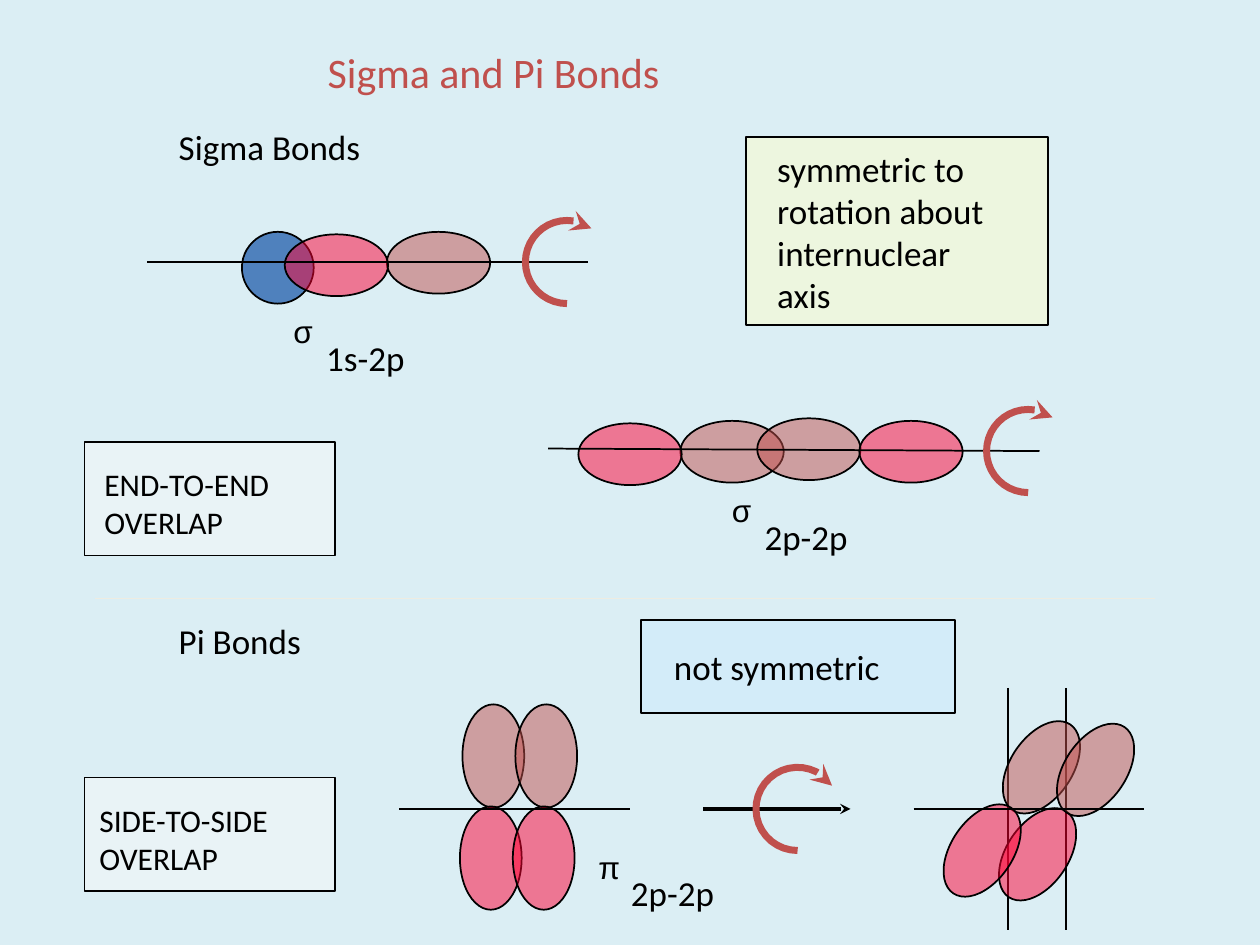
from dataclasses import dataclass
from math import cos, radians, sin

from lxml.etree import SubElement
from pptx import Presentation
from pptx.dml.color import RGBColor
from pptx.enum.shapes import MSO_CONNECTOR as Connector, MSO_SHAPE as Shape
from pptx.enum.text import MSO_ANCHOR as Anchor, MSO_AUTO_SIZE as AutoSize, PP_ALIGN as Align
from pptx.oxml.ns import qn
from pptx.util import Inches, Pt


@dataclass(frozen=True)
class Theme:
    background: str = "DBEEF4"
    ink: str = "000000"
    accent: str = "C0504D"
    rule: str = "EEECE1"
    s_orbital: str = "4F81BD"
    plus_lobe: str = "FF0033"
    minus_lobe: str = "C0504D"
    overlap_card: str = "F8F8F8"
    sigma_card: str = "FFFFCC"
    pi_card: str = "CCECFF"
    font: str = "Calibri"
    symbol_font: str = "Arial"
    title_size: int = 24
    text_size: int = 20
    small_size: int = 18


@dataclass(frozen=True)
class Box:
    left: float
    top: float
    width: float
    height: float

    def inner(self, dx, dy, width, height):
        """Return a box placed relative to this one's top left corner."""
        return Box(self.left + dx, self.top + dy, width, height)

    def inches(self):
        return [Inches(v) for v in (self.left, self.top, self.width, self.height)]


THEME = Theme()
LOBE_LONG, LOBE_SHORT = 0.82, 0.49
ARC_RADIUS = 0.33
TILT = 34


def rgb(code):
    return RGBColor.from_string(code)


def set_line(shape, color=THEME.ink, width=1, arrow=False):
    shape.line.color.rgb = rgb(color)
    shape.line.width = Pt(width)
    if arrow:
        SubElement(shape.line._get_or_add_ln(), qn("a:tailEnd"), type="stealth")


def draw_shape(page, kind, box, color, opacity=50, rotation=0):
    shape = page.shapes.add_shape(kind, *box.inches())
    shape.shadow.inherit = False
    shape.rotation = rotation
    shape.fill.solid()
    shape.fill.fore_color.rgb = rgb(color)
    if opacity < 100:
        color_node = shape.fill._xPr.find(qn("a:solidFill"))[0]
        SubElement(color_node, qn("a:alpha"), val=str(opacity * 1000))
    set_line(shape)


def draw_line(page, x1, y1, x2, y2, color=THEME.ink, width=1, arrow=False):
    line = page.shapes.add_connector(
        Connector.STRAIGHT, Inches(x1), Inches(y1), Inches(x2), Inches(y2))
    set_line(line, color, width, arrow)
    SubElement(line._element.spPr, qn("a:effectLst"))


def draw_rotation_arc(page, box, end_angle):
    """Draw an arrow turning clockwise from the bottom of the circle to end_angle."""
    center_x, center_y = box.left + ARC_RADIUS, box.top + ARC_RADIUS
    steps = 24
    angles = [radians(90 + (end_angle - 90) * i / steps) for i in range(steps + 1)]
    points = [(Inches(center_x + ARC_RADIUS * cos(a)), Inches(center_y + ARC_RADIUS * sin(a)))
              for a in angles]
    builder = page.shapes.build_freeform(*points[0])
    builder.add_line_segments(points[1:], close=False)
    arc = builder.convert_to_shape()
    arc.shadow.inherit = False
    arc.fill.background()
    set_line(arc, THEME.accent, 4, arrow=True)


def fill_text(frame, lines, size, color=THEME.ink, font=THEME.font):
    for i, line in enumerate(lines):
        para = frame.paragraphs[0] if i == 0 else frame.add_paragraph()
        para.alignment = Align.LEFT
        span = para.add_run()
        span.text = line
        span.font.size = Pt(size)
        span.font.name = font
        span.font.color.rgb = rgb(color)


def write(page, box, lines, size=THEME.text_size, font=THEME.font):
    frame = page.shapes.add_textbox(*box.inches()).text_frame
    frame.word_wrap = False
    fill_text(frame, lines, size, font=font)


def add_title(page, box, text):
    title = page.shapes.title
    title.left, title.top, title.width, title.height = box.inches()
    frame = title.text_frame
    frame.auto_size = AutoSize.NONE
    frame.vertical_anchor = Anchor.TOP
    fill_text(frame, [text], THEME.title_size, THEME.accent)


def add_card(page, box, color, text_box, lines, size=THEME.text_size):
    draw_shape(page, Shape.RECTANGLE, box, color)
    write(page, text_box, lines, size)


def add_bond_label(page, box, symbol, orbitals):
    """Write a Greek symbol with its orbitals as a lowered label."""
    write(page, box.inner(0.26, 0.19, 0.97, 0.43), [orbitals])
    write(page, box, [symbol], THEME.small_size, THEME.symbol_font)


def draw_lobes(page, box, lobes, upright=False, rotation=0):
    width, height = (LOBE_SHORT, LOBE_LONG) if upright else (LOBE_LONG, LOBE_SHORT)
    for dx, dy, color in lobes:
        draw_shape(page, Shape.OVAL, box.inner(dx, dy, width, height), color, rotation=rotation)


def add_s_p_bond(page, box):
    draw_shape(page, Shape.OVAL, box.inner(0.75, 0.09, 0.57, 0.57), THEME.s_orbital, 100)
    draw_lobes(page, box, [(1.9, 0.09, THEME.minus_lobe), (1.09, 0.11, THEME.plus_lobe)])
    axis = box.top + 0.33
    draw_line(page, box.left, axis, box.left + 3.5, axis)
    add_bond_label(page, box.inner(1.06, 0.68, 0.44, 0.57), "σ", "1s-2p")
    draw_rotation_arc(page, box.inner(3, 0, 0.52, 0.67), 306)


def add_p_p_bond(page, box):
    draw_lobes(page, box, [(1.05, 0.09, THEME.minus_lobe), (0.24, 0.11, THEME.plus_lobe),
                           (1.66, 0.07, THEME.minus_lobe), (2.47, 0.09, THEME.plus_lobe)])
    draw_line(page, box.left, box.top + 0.31, box.left + 3.9, box.top + 0.33)
    add_bond_label(page, box.inner(1.36, 0.6, 0.44, 0.57), "σ", "2p-2p")
    draw_rotation_arc(page, box.inner(3.48, 0, 0.52, 0.67), 306)


def add_pi_bond(page, box):
    for dx in (0.5, 0.92):
        draw_lobes(page, box, [(dx, 0, THEME.minus_lobe),
                               (dx - 0.02, 0.81, THEME.plus_lobe)], upright=True)
    axis = box.top + 0.83
    draw_line(page, box.left, axis, box.left + 1.83, axis)
    add_bond_label(page, box.inner(1.48, 1.09, 0.41, 0.57), "π", "2p-2p")


def add_turn_step(page, box):
    axis = box.top + 0.33
    draw_line(page, box.left, axis, box.left + box.width, axis, width=2, arrow=True)
    draw_rotation_arc(page, box.inner(0.42, 0, 0.6, 0.67), 326)


def add_turned_pi_bond(page, box):
    for x in (box.left + 0.75, box.left + 1.21):
        draw_line(page, x, box.top, x, box.top + box.height)
    draw_lobes(page, box, [(0.74, 0.91, THEME.plus_lobe), (0.77, 0.22, THEME.minus_lobe),
                           (0.3, 0.88, THEME.plus_lobe), (1.2, 0.24, THEME.minus_lobe)],
               upright=True, rotation=TILT)
    axis = box.top + 0.96
    draw_line(page, box.left, axis, box.left + box.width, axis)


def main():
    deck = Presentation()
    deck.slide_width, deck.slide_height = Inches(10), Inches(7.5)
    page = deck.slides.add_slide(deck.slide_layouts[5])
    page.background.fill.solid()
    page.background.fill.fore_color.rgb = rgb(THEME.background)

    add_title(page, Box(2.5, 0.32, 3.67, 0.5), "Sigma and Pi Bonds")
    write(page, Box(1.32, 0.95, 1.98, 0.43), ["Sigma Bonds"])
    add_card(page, Box(5.92, 1.09, 2.4, 1.49), THEME.sigma_card, Box(6.07, 1.12, 2.18, 1.43),
             ["symmetric to", "rotation about", "internuclear", "axis"])
    add_card(page, Box(0.67, 3.51, 1.99, 0.9), THEME.overlap_card, Box(0.73, 3.64, 1.81, 0.7),
             ["END-TO-END", "OVERLAP"], THEME.small_size)
    add_s_p_bond(page, Box(1.17, 1.75, 3.52, 1.3))
    add_p_p_bond(page, Box(4.35, 3.25, 4, 1.21))

    draw_line(page, 0.75, 4.75, 9.17, 4.75, THEME.rule)
    write(page, Box(1.32, 4.87, 1.39, 0.43), ["Pi Bonds"])
    add_card(page, Box(5.09, 4.92, 2.49, 0.74), THEME.pi_card, Box(5.25, 5.07, 2.12, 0.43),
             ["not symmetric"])
    add_card(page, Box(0.67, 6.17, 1.99, 0.9), THEME.overlap_card, Box(0.69, 6.31, 1.91, 0.7),
             ["SIDE-TO-SIDE", "OVERLAP"], THEME.small_size)
    add_pi_bond(page, Box(3.17, 5.59, 2.72, 1.71))
    add_turn_step(page, Box(5.58, 6.09, 1.17, 0.67))
    add_turned_pi_bond(page, Box(7.25, 5.46, 1.83, 1.92))

    deck.save("out.pptx")


if __name__ == "__main__":
    main()
